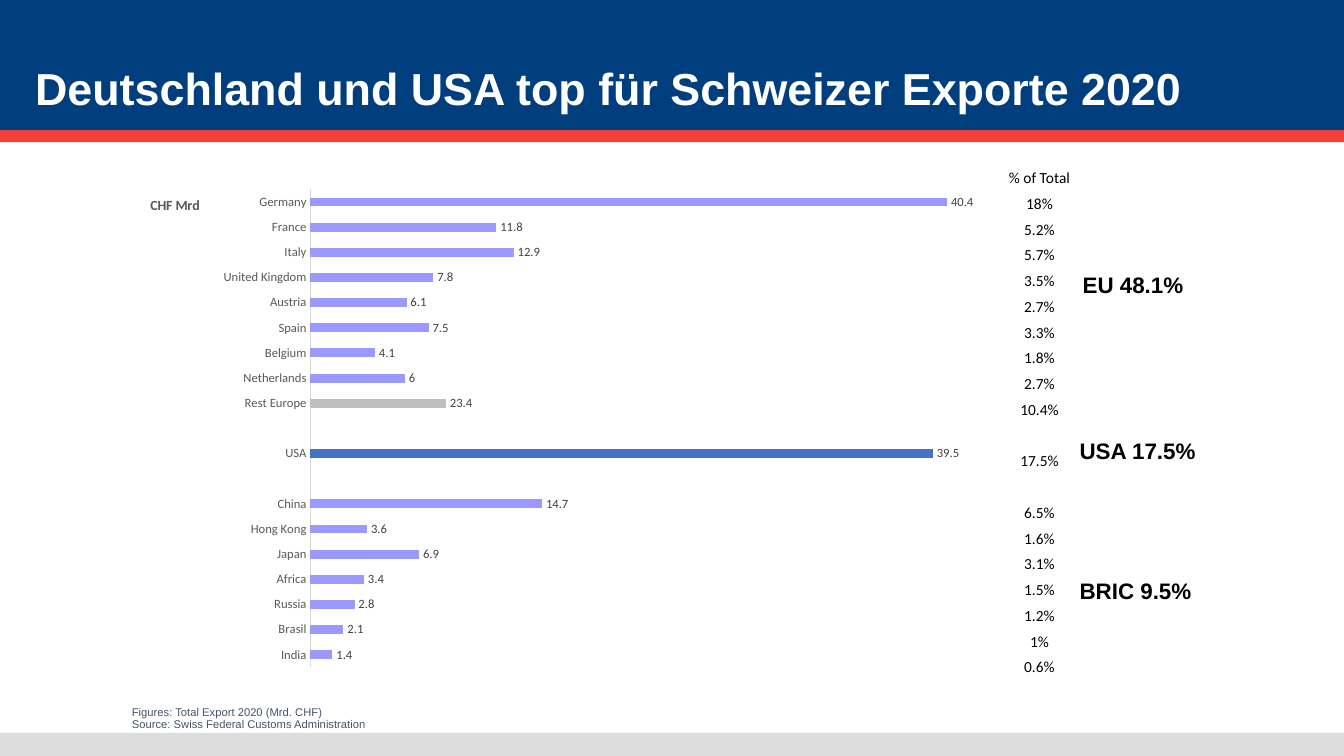
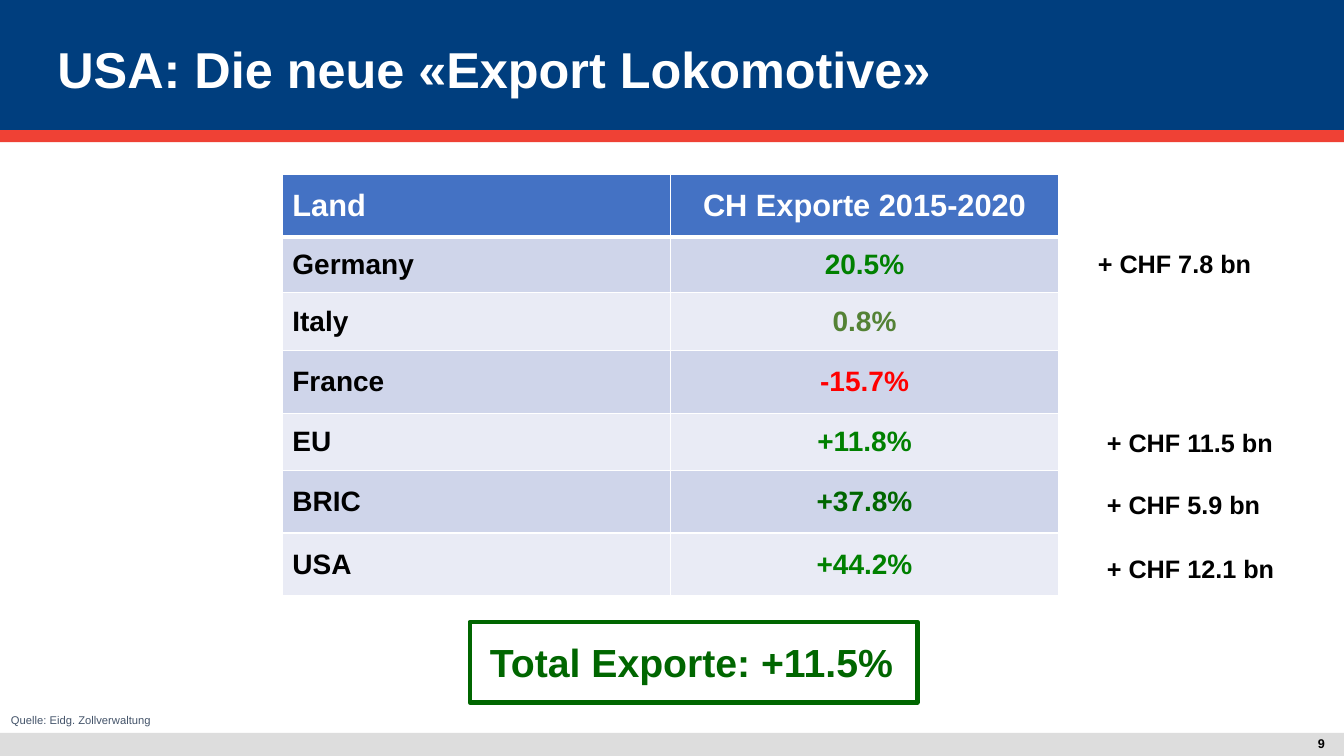
from dataclasses import dataclass
from typing import Optional, Sequence

from lxml import etree
from pptx import Presentation
from pptx.chart.data import CategoryChartData
from pptx.dml.color import RGBColor
from pptx.enum.chart import XL_CHART_TYPE as ChartType
from pptx.enum.chart import XL_LABEL_POSITION as LabelPosition
from pptx.enum.chart import XL_TICK_MARK as TickMark
from pptx.enum.shapes import MSO_SHAPE as Preset
from pptx.enum.text import MSO_ANCHOR as Anchor
from pptx.enum.text import PP_ALIGN as Align
from pptx.oxml.ns import qn
from pptx.util import Emu, Pt

EMU_PER_PX = 9144  # 100 px to the inch
SLIDE_WIDTH, SLIDE_HEIGHT = 1333, 750


def px(length: int) -> Emu:
    return Emu(length * EMU_PER_PX)


def rgb(value: str) -> RGBColor:
    return RGBColor.from_string(value)


@dataclass(frozen=True)
class Theme:
    font: str = "Arial"
    chart_font: str = "Calibri"
    white: RGBColor = rgb("FFFFFF")
    black: RGBColor = rgb("000000")
    navy: RGBColor = rgb("003E7E")
    red_band: RGBColor = rgb("EF4135")
    footer: RGBColor = rgb("DDDDDD")
    slate: RGBColor = rgb("44546A")
    blue: RGBColor = rgb("4472C4")
    violet: RGBColor = rgb("9999FF")
    gray: RGBColor = rgb("BFBFBF")
    axis_line: RGBColor = rgb("D9D9D9")
    axis_text: RGBColor = rgb("595959")
    label_text: RGBColor = rgb("404040")
    row_dark: RGBColor = rgb("CFD5EA")
    row_light: RGBColor = rgb("E9EBF5")
    green: RGBColor = rgb("008000")
    olive: RGBColor = rgb("548235")
    dark_green: RGBColor = rgb("006600")
    red: RGBColor = rgb("FF0000")
    source_size: int = 8
    small_size: int = 9
    axis_title_size: int = 10
    share_size: int = 11
    group_size: int = 16
    amount_size: int = 18
    cell_size: int = 20
    header_size: int = 22
    total_size: int = 28


THEME = Theme()


@dataclass(frozen=True)
class Box:
    left: int
    top: int
    width: int
    height: int

    def emu(self) -> tuple:
        return px(self.left), px(self.top), px(self.width), px(self.height)


@dataclass(frozen=True)
class Style:
    size: int
    color: RGBColor = THEME.black
    bold: bool = True
    font: str = THEME.font
    align: Align = Align.LEFT
    spacing: Optional[float] = None


@dataclass(frozen=True)
class Callout:
    text: str
    left: int
    top: int


@dataclass(frozen=True)
class Market:
    name: str
    exports: float
    share: str
    color: Optional[RGBColor] = None
    label: Optional[str] = None


@dataclass(frozen=True)
class Growth:
    country: str
    change: str
    height: int
    color: RGBColor = THEME.green


MARKET_GROUPS = (
    (
        Market("Germany", 40.4, "18%"),
        Market("France", 11.8, "5.2%"),
        Market("Italy", 12.9, "5.7%"),
        Market("United Kingdom", 7.8, "3.5%"),
        Market("Austria", 6.1, "2.7%"),
        Market("Spain", 7.5, "3.3%"),
        Market("Belgium", 4.1, "1.8%"),
        Market("Netherlands", 6, "2.7%"),
        Market("Rest Europe", 8.6, "10.4%", THEME.gray, "23.4"),
    ),
    (Market("USA", 39.5, "17.5%", THEME.blue),),
    (
        Market("China", 14.7, "6.5%"),
        Market("Hong Kong", 3.6, "1.6%"),
        Market("Japan", 6.9, "3.1%"),
        Market("Africa", 3.4, "1.5%"),
        Market("Russia", 2.8, "1.2%"),
        Market("Brasil", 2.1, "1%"),
        Market("India", 1.4, "0.6%"),
    ),
)
GROUP_SHARES = (
    Callout("EU 48.1%", 1064, 264),
    Callout("USA 17.5%", 1061, 429),
    Callout("BRIC 9.5%", 1061, 568),
)
GROWTH_ROWS = (
    Growth("Germany", "20.5%", 55),
    Growth("Italy", "0.8%", 58, THEME.olive),
    Growth("France", "-15.7%", 62, THEME.red),
    Growth("EU", "+11.8%", 57),
    Growth("BRIC", "+37.8%", 62, THEME.dark_green),
    Growth("USA", "+44.2%", 62),
)
GROWTH_AMOUNTS = (
    Callout("+ CHF 7.8 bn", 1079, 241),
    Callout("+ CHF 11.5 bn", 1088, 419),
    Callout("+ CHF 5.9 bn", 1088, 481),
    Callout("+ CHF 12.1 bn", 1088, 544),
)


# Text and shapes
def set_font(font, size: int, color: RGBColor, bold: bool, name: str) -> None:
    font.size, font.bold, font.name = Pt(size), bold, name
    font.color.rgb = color


def write(frame, lines: Sequence[str], style: Style) -> None:
    for index, line in enumerate(lines):
        paragraph = frame.add_paragraph() if index else frame.paragraphs[0]
        paragraph.text = line
        paragraph.alignment = style.align
        paragraph.line_spacing = style.spacing
        set_font(paragraph.font, style.size, style.color, style.bold, style.font)


def add_text(slide, box: Box, lines: Sequence[str], style: Style, anchor: Anchor = Anchor.TOP):
    frame = slide.shapes.add_textbox(*box.emu()).text_frame
    frame.word_wrap = True
    frame.vertical_anchor = anchor
    write(frame, lines, style)
    return frame


def add_band(slide, top: int, height: int, color: RGBColor) -> None:
    band = slide.shapes.add_shape(Preset.RECTANGLE, *Box(0, top, SLIDE_WIDTH, height).emu())
    band.shadow.inherit = False
    band.fill.solid()
    band.fill.fore_color.rgb = color
    band.line.fill.background()


def add_callouts(slide, callouts: Sequence[Callout], size: int) -> None:
    for callout in callouts:
        add_text(slide, Box(callout.left, callout.top, 190, 40), [callout.text], Style(size))


def add_base_slide(presentation, title: str, title_box: Box, title_size: int,
                   sources: Sequence[str], source_box: Box):
    slide = presentation.slides.add_slide(presentation.slide_layouts[6])
    add_band(slide, 727, 23, THEME.footer)
    add_band(slide, 0, 130, THEME.navy)
    add_band(slide, 129, 12, THEME.red_band)
    add_text(slide, title_box, [title], Style(title_size, THEME.white, spacing=0.9), Anchor.MIDDLE)
    add_text(slide, source_box, sources, Style(THEME.source_size, THEME.slate, False, spacing=0.9))
    return slide


# Chart
def set_layout(parent, index: int, **values) -> None:
    """Place a chart part by hand, in fractions of the chart."""
    for old in parent.findall(qn("c:layout")):
        parent.remove(old)
    layout = etree.Element(qn("c:layout"))
    manual = etree.SubElement(layout, qn("c:manualLayout"))
    for tag, value in values.items():
        etree.SubElement(manual, qn(f"c:{tag}")).set("val", str(value))
    parent.insert(index, layout)


def add_export_chart(slide) -> None:
    bars: list[Optional[Market]] = []
    for group in MARKET_GROUPS:
        bars += ([None] if bars else []) + list(group)
    data = CategoryChartData()
    data.categories = [bar.name if bar else "" for bar in bars]
    data.add_series("Series 1", [bar.exports if bar else None for bar in bars])
    chart = slide.shapes.add_chart(
        ChartType.BAR_CLUSTERED, *Box(136, 149, 1061, 534).emu(), data).chart
    chart.has_title = chart.has_legend = False
    set_font(chart.font, THEME.axis_title_size, THEME.black, False, THEME.chart_font)
    set_layout(chart.plots[0]._element.getparent(), 0, layoutTarget="inner", xMode="edge",
               yMode="edge", x=0.162, y=0.073, w=0.663, h=0.888)

    # Axes
    values = chart.value_axis
    values.minimum_scale, values.maximum_scale = 0, 45
    values.has_major_gridlines = values.visible = False
    categories = chart.category_axis
    categories.reverse_order = True
    categories.major_tick_mark = categories.minor_tick_mark = TickMark.NONE
    categories.format.line.color.rgb = THEME.axis_line
    categories.format.line.width = Pt(0.75)
    set_font(categories.tick_labels.font, THEME.small_size, THEME.axis_text, False, THEME.chart_font)
    title = categories.axis_title
    write(title.text_frame, ["CHF Mrd"],
          Style(THEME.axis_title_size, THEME.axis_text, font=THEME.chart_font))
    title._element.find(".//" + qn("a:bodyPr")).set("rot", "0")
    set_layout(title._element, 1, xMode="edge", yMode="edge", x=0.01, y=0.08)

    # Bars and labels
    plot = chart.plots[0]
    plot.gap_width, plot.vary_by_categories = 182, False
    series = plot.series[0]
    series.format.fill.solid()
    series.format.fill.fore_color.rgb = THEME.violet
    labels = series.data_labels
    labels.show_value, labels.position = True, LabelPosition.OUTSIDE_END
    label_style = Style(THEME.small_size, THEME.label_text, False, THEME.chart_font)
    set_font(labels.font, label_style.size, label_style.color, False, label_style.font)
    for index, bar in enumerate(bars):
        if bar and bar.color:
            fill = series.points[index].format.fill
            fill.solid()
            fill.fore_color.rgb = bar.color
        if bar and bar.label:
            label = series.points[index].data_label
            write(label.text_frame, [bar.label], label_style)
            label.position = LabelPosition.OUTSIDE_END


def add_share_column(slide) -> None:
    shares = [market.share for group in MARKET_GROUPS for market in group]
    group_starts = {1 + sum(map(len, MARKET_GROUPS[:n])) for n in range(1, len(MARKET_GROUPS))}
    frame = add_text(slide, Box(984, 162, 94, 534), ["% of Total", *shares],
                     Style(THEME.share_size, bold=False, font=THEME.chart_font, align=Align.CENTER))
    for index, paragraph in enumerate(frame.paragraphs):
        if index:
            paragraph.line_spacing = Pt(18.4)
        if index in group_starts:
            paragraph.space_before = Pt(18.4)


# Table
def format_cell(cell, text: str, style: Style, fill: RGBColor, bottom_width: int) -> None:
    cell.vertical_anchor = Anchor.MIDDLE
    write(cell.text_frame, [text], style)
    properties = cell._tc.get_or_add_tcPr()
    for side, width in (("L", 1), ("R", 1), ("T", 1), ("B", bottom_width)):
        line = etree.SubElement(properties, qn(f"a:ln{side}"), w=str(Pt(width)))
        solid = etree.SubElement(line, qn("a:solidFill"))
        etree.SubElement(solid, qn("a:srgbClr"), val=str(THEME.white))
    cell.fill.solid()
    cell.fill.fore_color.rgb = fill


def add_growth_table(slide) -> None:
    rows = (Growth("Land", "CH Exporte 2015-2020", 62, THEME.white), *GROWTH_ROWS)
    box = Box(280, 173, 770, sum(row.height for row in rows))
    table = slide.shapes.add_table(len(rows), 2, *box.emu()).table
    for index, row in enumerate(rows):
        table.rows[index].height = px(row.height)
        size = THEME.cell_size if index else THEME.header_size
        fill = (THEME.row_dark if index % 2 else THEME.row_light) if index else THEME.blue
        name_color = THEME.black if index else THEME.white
        bottom = 1 if index else 3
        format_cell(table.cell(index, 0), row.country, Style(size, name_color), fill, bottom)
        format_cell(table.cell(index, 1), row.change,
                    Style(size, row.color, align=Align.CENTER), fill, bottom)


def add_total(slide) -> None:
    frame_shape = slide.shapes.add_shape(Preset.RECTANGLE, *Box(466, 617, 444, 80).emu())
    frame_shape.shadow.inherit = False
    frame_shape.fill.background()
    frame_shape.line.color.rgb = THEME.dark_green
    frame_shape.line.width = Pt(3)
    frame = frame_shape.text_frame
    frame.margin_left = px(20)
    frame.vertical_anchor = Anchor.MIDDLE
    write(frame, ["Total Exporte: +11.5%"], Style(THEME.total_size, THEME.dark_green))


def main() -> None:
    presentation = Presentation()
    presentation.slide_width, presentation.slide_height = px(SLIDE_WIDTH), px(SLIDE_HEIGHT)

    # Exports by market
    slide = add_base_slide(
        presentation, "Deutschland und USA top für Schweizer Exporte 2020", Box(25, 37, 1183, 106), 32,
        ["Figures: Total Export 2020 (Mrd. CHF)", "Source: Swiss Federal Customs Administration"],
        Box(121, 696, 470, 34))
    add_export_chart(slide)
    add_share_column(slide)
    add_callouts(slide, GROUP_SHARES, THEME.group_size)

    # Export growth
    slide = add_base_slide(
        presentation, "USA: Die neue «Export Lokomotive»", Box(47, 14, 1150, 116), 36,
        ["Quelle: Eidg. Zollverwaltung"], Box(1, 704, 470, 22))
    add_text(slide, Box(1024, 722, 300, 32), ["9"],
             Style(THEME.small_size, align=Align.RIGHT), Anchor.MIDDLE)
    add_growth_table(slide)
    add_total(slide)
    add_callouts(slide, GROWTH_AMOUNTS, THEME.amount_size)

    presentation.save("out.pptx")


if __name__ == "__main__":
    main()
